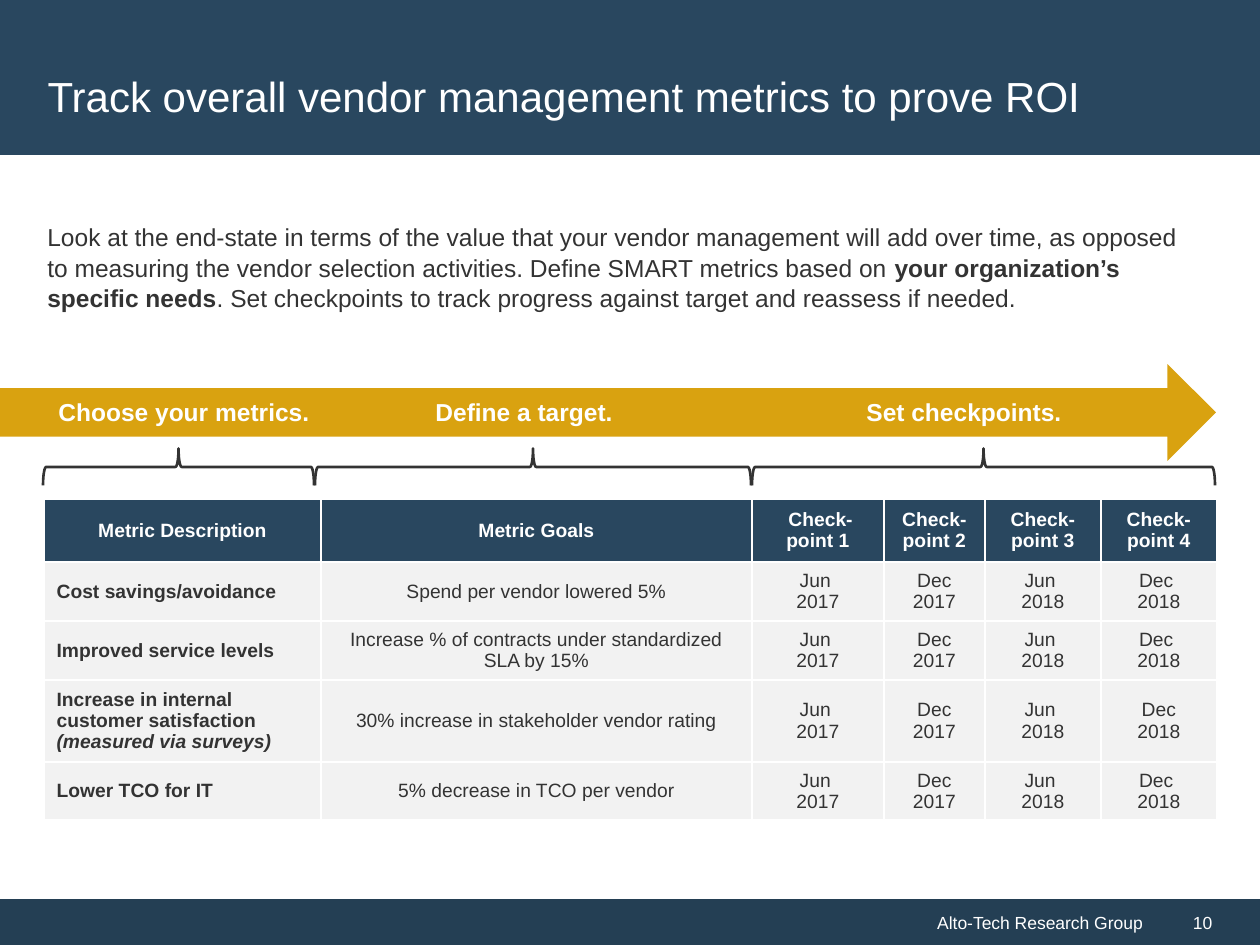
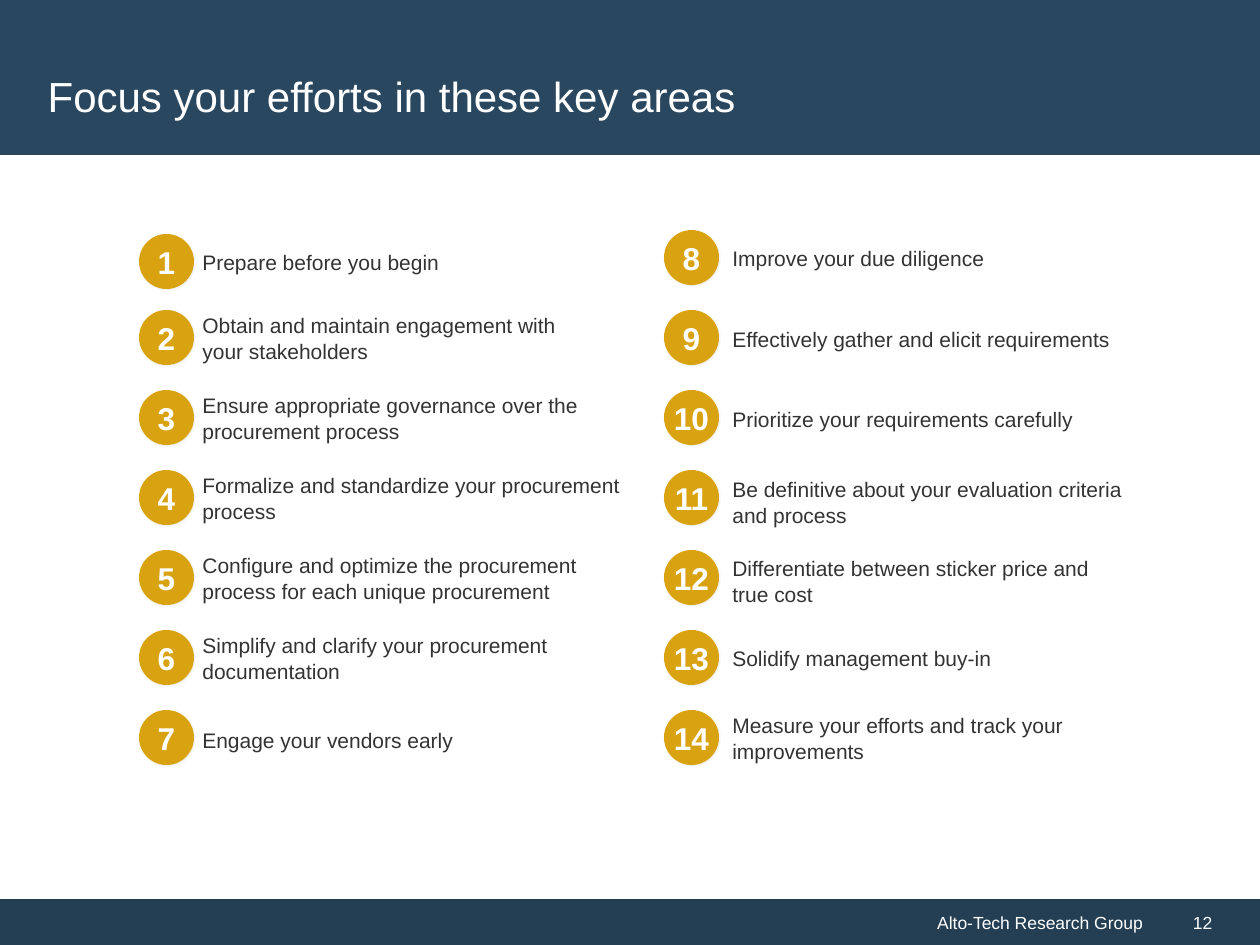
"""Build two vendor management slides: a metrics table and a list of focus areas."""
from pptx import Presentation
from pptx.dml.color import RGBColor
from pptx.enum.shapes import MSO_SHAPE as Shape
from pptx.enum.text import MSO_ANCHOR as Anchor, PP_ALIGN as Align
from pptx.oxml import parse_xml
from pptx.oxml.ns import nsdecls, qn
from pptx.util import Pt

SCALE = 914400 / 126
NAVY = RGBColor(0x29, 0x47, 0x5F)
DEEP_NAVY = RGBColor(0x24, 0x3F, 0x54)
GOLD = RGBColor(0xD9, 0xA2, 0x10)
INK = RGBColor(0x33, 0x33, 0x33)
PALE = RGBColor(0xF2, 0xF2, 0xF2)
WHITE = RGBColor(0xFF, 0xFF, 0xFF)

BORDER = '<a:{} {} w="19050"><a:solidFill><a:srgbClr val="FFFFFF"/></a:solidFill></a:{}>'
SOFT_SHADOW = (
    '<a:outerShdw {} blurRad="12700" dist="12700" dir="2700000" algn="tl" rotWithShape="0">'
    '<a:srgbClr val="000000"><a:alpha val="5000"/></a:srgbClr></a:outerShdw>'
)


def write(frame, paragraphs, color=INK, para_format=None, **font_format):
    """Fill a text frame; each paragraph is a list of (text, font overrides)."""
    frame.word_wrap = True
    for index, spans in enumerate(paragraphs):
        para = frame.paragraphs[0] if index == 0 else frame.add_paragraph()
        for name, value in (para_format or {}).items():
            setattr(para, name, value)
        for text, overrides in spans:
            span = para.add_run()
            span.text = text
            span.font.color.rgb = color
            for name, value in {"name": "Arial", **font_format, **overrides}.items():
                setattr(span.font, name, value)


def place(page, kind, left, top, width, height, fill=None):
    """Add a preset shape, or a text box when kind is None, measured in px."""
    bounds = [round(length * SCALE) for length in (left, top, width, height)]
    if kind is None:
        return page.shapes.add_textbox(*bounds)
    shape = page.shapes.add_shape(kind, *bounds)
    shape.shadow.inherit = False
    if fill is None:
        shape.fill.background()
    else:
        shape.fill.solid()
        shape.fill.fore_color.rgb = fill
        shape.line.fill.background()
    return shape


deck = Presentation()
deck.slide_width, deck.slide_height = round(1260 * SCALE), round(945 * SCALE)

pages = []
for heading, number in (
    ("Track overall vendor management metrics to prove ROI", "10"),
    ("Focus your efforts in these key areas", "12"),
):
    page = deck.slides.add_slide(deck.slide_layouts[5])
    pages.append(page)
    title = page.shapes.title
    for name, length in {"left": 35, "top": 35, "width": 1188, "height": 121}.items():
        setattr(title, name, round(length * SCALE))
    title.text_frame.vertical_anchor = Anchor.MIDDLE
    write(title.text_frame, [[(heading, {})]], WHITE, {"alignment": Align.LEFT}, size=Pt(24))

    header_band = place(page, Shape.RECTANGLE, 0, 0, 1260, 155, NAVY)
    title.element.addprevious(header_band.element)
    for left, width, text, align in (
        (0, 1155, "Alto-Tech Research Group", Align.RIGHT),
        (1155, 105, number, Align.LEFT),
    ):
        footer = place(page, Shape.RECTANGLE, left, 899, width, 46, DEEP_NAVY)
        footer.text_frame.vertical_anchor = Anchor.MIDDLE
        if align == Align.LEFT:
            footer.text_frame.margin_left = round(38 * SCALE)
        write(footer.text_frame, [[(text, {})]], WHITE, {"alignment": align}, size=Pt(10))

metrics_page, areas_page = pages

place(metrics_page, Shape.RIGHT_ARROW, 0, 364, 1216, 97, GOLD)
intro = place(metrics_page, None, 35, 214, 1174, 120)
write(intro.text_frame, [[
    ("Look at the end-state in terms of the value that your vendor management will add over time, "
     "as opposed to measuring the vendor selection activities. Define SMART metrics based on ", {}),
    ("your organization’s specific needs", {"bold": True}),
    (". Set checkpoints to track progress against target and reassess if needed.", {}),
]], para_format={"space_before": Pt(5), "line_spacing": 1.05}, size=Pt(14))

for text, left, width in (
    ("Choose your metrics.", 46, 281),
    ("Define a target.", 423, 205),
    ("Set checkpoints.", 854, 268),
):
    step = place(metrics_page, None, left, 391, width, 43)
    write(step.text_frame, [[(text, {})]], WHITE, size=Pt(14), bold=True)

BRACE_DEPTH, BRACE_CENTER = 37, 467
for start, end in ((43, 314), (315, 751), (752, 1215)):
    span_width = end - start
    brace = place(metrics_page, Shape.LEFT_BRACE, (start + end - BRACE_DEPTH) / 2,
                  BRACE_CENTER - span_width / 2, BRACE_DEPTH, span_width)
    brace.rotation = 90
    brace.line.color.rgb = INK
    brace.line.width = Pt(1.5)

HEADERS = ["Metric Description", "Metric Goals", " Check-point 1", "Check- point 2",
           "Check-point 3", "Check-point 4"]
METRICS = [
    ("Cost savings/avoidance", "Spend per vendor lowered 5%"),
    ("Improved service levels", "Increase % of contracts under standardized SLA by 15%"),
    ("Increase in internal customer satisfaction\n(measured via surveys)",
     "30% increase in stakeholder vendor rating"),
    ("Lower TCO for IT", "5% decrease in TCO per vendor"),
]
CHECKPOINTS = ["Jun \n2017", "Dec 2017", "Jun \n2018", "Dec \n2018"]
COLUMN_WIDTHS = [277, 431, 132, 101, 116, 116]
ROW_HEIGHTS = [63, 56, 56, 77, 54]

rows = [HEADERS] + [[*metric, *CHECKPOINTS] for metric in METRICS]
rows[3][5] = "Dec\n2018"
table_bounds = (44, 499, sum(COLUMN_WIDTHS), sum(ROW_HEIGHTS))
table = metrics_page.shapes.add_table(
    len(rows), len(HEADERS), *[round(length * SCALE) for length in table_bounds]).table
for column, width in zip(table.columns, COLUMN_WIDTHS):
    column.width = round(width * SCALE)
for row, height in zip(table.rows, ROW_HEIGHTS):
    row.height = round(height * SCALE)

for row_index, texts in enumerate(rows):
    for column_index, text in enumerate(texts):
        is_header, is_metric = row_index == 0, column_index == 0
        cell = table.cell(row_index, column_index)
        cell.vertical_anchor = Anchor.MIDDLE
        cell.fill.solid()
        cell.fill.fore_color.rgb = NAVY if is_header else PALE
        align = Align.LEFT if is_metric and not is_header else Align.CENTER
        paragraphs = [[(line, {"italic": line.startswith("(")})] for line in text.split("\n")]
        write(cell.text_frame, paragraphs, WHITE if is_header else INK, {"alignment": align},
              size=Pt(11), bold=is_header or is_metric)
        properties = cell._tc.get_or_add_tcPr()
        for position, edge in enumerate(("lnL", "lnR", "lnT", "lnB")):
            properties.insert(position, parse_xml(BORDER.format(edge, nsdecls("a"), edge)))

LEFT_AREAS = [
    ("Prepare before you begin", 300, 0),
    ("Obtain and maintain engagement with your stakeholders", 408, 0),
    ("Ensure appropriate governance over the procurement process", 450, 0),
    ("Formalize and standardize your procurement process", 455, 0),
    ("Configure and optimize the procurement process for each unique procurement", 459, 0),
    ("Simplify and clarify your procurement documentation", 386, 0),
    ("Engage your vendors early", 300, 2),
]
RIGHT_AREAS = [
    ("Improve your due diligence", 300, 0),
    ("Effectively gather and elicit requirements", 420, 1),
    ("Prioritize your requirements carefully", 390, 1),
    ("Be definitive about your evaluation criteria and process", 446, 4),
    ("Differentiate between sticker price and true cost", 417, 3),
    ("Solidify management buy-in", 300, 0),
    ("Measure your efforts and track your improvements", 479, 0),
]
CIRCLE, PITCH, LABEL_HEIGHT = 55, 80, 63

for areas, first_number, circle_left, label_left, first_top in (
    (LEFT_AREAS, 1, 139, 190, 234),
    (RIGHT_AREAS, 8, 664, 720, 230),
):
    for index, (text, width, shift) in enumerate(areas):
        top = 230 + PITCH * index if index else first_top
        circle = place(areas_page, Shape.OVAL, circle_left, top, CIRCLE, CIRCLE, GOLD)
        circle.element.spPr.find(qn("a:effectLst")).append(
            parse_xml(SOFT_SHADOW.format(nsdecls("a"))))
        frame = circle.text_frame
        for name, value in {"margin_left": 0, "margin_right": 0, "margin_top": 0,
                            "margin_bottom": 0, "vertical_anchor": Anchor.MIDDLE}.items():
            setattr(frame, name, value)
        write(frame, [[(str(first_number + index), {})]], WHITE,
              {"alignment": Align.CENTER}, size=Pt(18), bold=True)
        frame.word_wrap = False

        label_top = top + (CIRCLE - LABEL_HEIGHT) / 2 + shift
        label = place(areas_page, None, label_left, label_top, width, LABEL_HEIGHT)
        label.text_frame.vertical_anchor = Anchor.MIDDLE
        write(label.text_frame, [[(text, {})]], para_format={"line_spacing": 1.05}, size=Pt(12))

deck.save("out.pptx")
